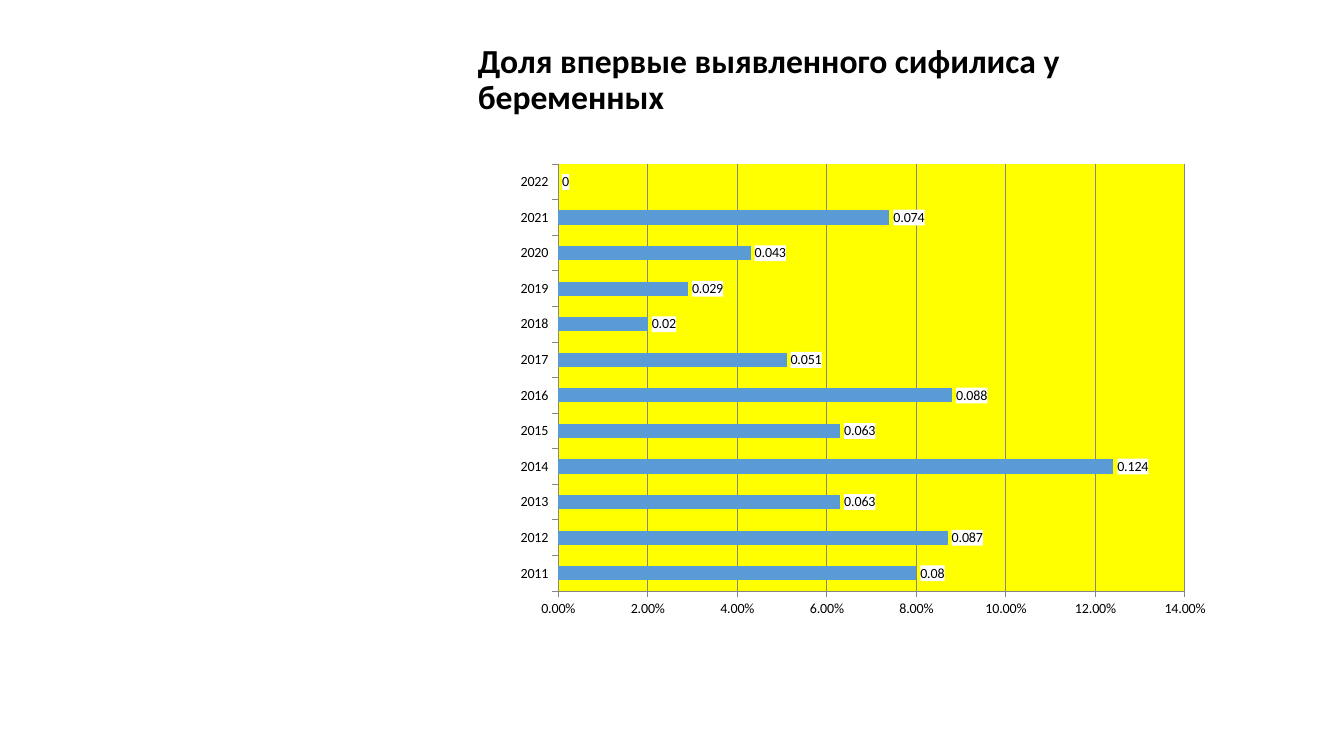
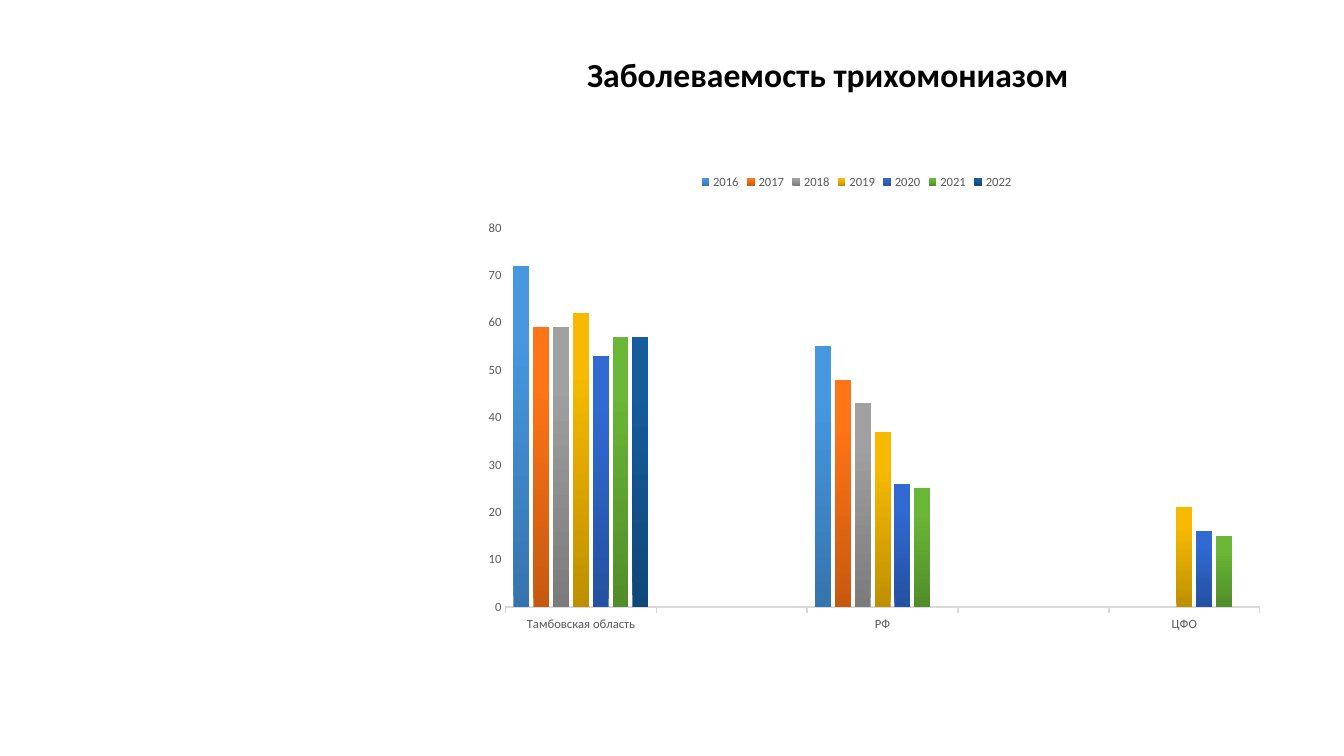
from lxml import etree
from pptx import Presentation
from pptx.chart.data import CategoryChartData
from pptx.dml.color import RGBColor
from pptx.enum.chart import (XL_CHART_TYPE, XL_LABEL_POSITION,
                             XL_LEGEND_POSITION, XL_TICK_MARK)
from pptx.enum.text import MSO_ANCHOR, PP_ALIGN
from pptx.oxml import parse_xml
from pptx.oxml.ns import nsdecls, qn
from pptx.util import Inches, Pt

FONT = "Calibri"
BLACK = RGBColor(0x00, 0x00, 0x00)
WHITE = RGBColor(0xFF, 0xFF, 0xFF)
YELLOW = RGBColor(0xFF, 0xFF, 0x00)
BLUE = RGBColor(0x5B, 0x9B, 0xD5)
GRID_GRAY = RGBColor(0x86, 0x86, 0x86)
TEXT_GRAY = RGBColor(0x59, 0x59, 0x59)
LINE_GRAY = RGBColor(0xD9, 0xD9, 0xD9)

SYPHILIS_SHARE = {
    "2011": 0.08, "2012": 0.087, "2013": 0.063, "2014": 0.124,
    "2015": 0.063, "2016": 0.088, "2017": 0.051, "2018": 0.02,
    "2019": 0.029, "2020": 0.043, "2021": 0.074, "2022": 0,
}

REGIONS = ["Тамбовская область", "", "РФ", "", "ЦФО"]
# year: values by region, then the dark and light ends of the bar gradient
TRICHOMONIASIS = {
    "2016": ((72, None, 55, None, None), "3674AD", "4697E0"),
    "2017": ((59, None, 48, None, None), "C65910", "FF7416"),
    "2018": ((59, None, 43, None, None), "7B7B7B", "A0A0A0"),
    "2019": ((62, None, 37, None, 21), "BE8F00", "F7BA00"),
    "2020": ((53, None, 26, None, 16), "2451A1", "2F69D1"),
    "2021": ((57, None, 25, None, 15), "518D2A", "6AB636"),
    "2022": ((57, None, None, None, None), "104778", "145C9C"),
}


def set_font(font, size, color, bold=False):
    font.name = FONT
    font.size = Pt(size)
    font.bold = bold
    font.color.rgb = color


def add_text(page, text, box, size=24, color=BLACK, bold=True,
             align=PP_ALIGN.LEFT):
    frame = page.shapes.add_textbox(*map(Inches, box)).text_frame
    frame.word_wrap = True
    frame.vertical_anchor = MSO_ANCHOR.MIDDLE
    para = frame.paragraphs[0]
    para.alignment = align
    para.line_spacing = 0.9
    span = para.add_run()
    span.text = text
    set_font(span.font, size, color, bold)


def solid_properties(color):
    return parse_xml(
        f'<c:spPr {nsdecls("c", "a")}><a:solidFill><a:srgbClr val="{color}"/>'
        '</a:solidFill></c:spPr>')


def set_plot_layout(chart, left, top, width, height):
    """Fix the inner plot area, in fractions of the chart."""
    area = chart._chartSpace.chart.plotArea
    for old in area.findall(qn("c:layout")):
        area.remove(old)
    layout = etree.Element(qn("c:layout"))
    manual = etree.SubElement(layout, qn("c:manualLayout"))
    settings = {"layoutTarget": "inner", "xMode": "edge", "yMode": "edge",
                "x": left, "y": top, "w": width, "h": height}
    for name, value in settings.items():
        etree.SubElement(manual, qn(f"c:{name}")).set("val", str(value))
    area.insert(0, layout)
    return area


def add_bar_chart(page, kind, categories, series, box, gap, overlap=0):
    data = CategoryChartData()
    data.categories = categories
    for name, values in series.items():
        data.add_series(name, values)
    chart = page.shapes.add_chart(kind, *map(Inches, box), data).chart
    chart.has_title = False
    chart.has_legend = False
    set_font(chart.font, 10, BLACK)
    plot = chart.plots[0]
    plot.vary_by_categories = False
    plot.gap_width = gap
    plot.overlap = overlap
    return chart


def set_value_scale(axis, maximum, step, number_format):
    axis.minimum_scale = 0
    axis.maximum_scale = maximum
    axis.major_unit = step
    axis.tick_labels.number_format = number_format
    axis.tick_labels.number_format_is_linked = False


def style_axis_line(line, color, width=0.75):
    line.color.rgb = color
    line.width = Pt(width)


def add_value_labels(plot):
    plot.has_data_labels = True
    labels = plot.data_labels
    labels.show_value = True
    labels.position = XL_LABEL_POSITION.OUTSIDE_END
    labels.number_format = "General"
    labels.number_format_is_linked = False
    set_font(labels.font, 10, BLACK)
    text_properties = labels._element.find(qn("c:txPr"))
    text_properties.addprevious(solid_properties(WHITE))


def add_share_chart(page, box):
    """Horizontal bars with labels on a yellow plot area."""
    chart = add_bar_chart(page, XL_CHART_TYPE.BAR_CLUSTERED, SYPHILIS_SHARE,
                          {"Series 1": SYPHILIS_SHARE.values()}, box, gap=150)
    area = set_plot_layout(chart, 0.073, 0.019, 0.878, 0.905)
    area.append(solid_properties(YELLOW))
    set_value_scale(chart.value_axis, 0.14, 0.02, "0.00%")
    chart.value_axis.has_major_gridlines = True
    for line in (chart.value_axis.major_gridlines.format.line,
                 chart.value_axis.format.line,
                 chart.category_axis.format.line):
        style_axis_line(line, GRID_GRAY)
    bars = chart.plots[0].series[0].format.fill
    bars.solid()
    bars.fore_color.rgb = BLUE
    add_value_labels(chart.plots[0])


def add_incidence_chart(page, box):
    """Columns for each year, grouped by region, with a legend on top."""
    columns = {year: row[0] for year, row in TRICHOMONIASIS.items()}
    chart = add_bar_chart(page, XL_CHART_TYPE.COLUMN_CLUSTERED, REGIONS,
                          columns, box, gap=100, overlap=-24)
    set_plot_layout(chart, 0.077, 0.123, 0.909, 0.722)
    chart.has_legend = True
    chart.legend.position = XL_LEGEND_POSITION.TOP
    chart.legend.include_in_layout = False
    value_axis, category_axis = chart.value_axis, chart.category_axis
    set_value_scale(value_axis, 80, 10, "General")
    value_axis.has_major_gridlines = False
    value_axis.major_tick_mark = XL_TICK_MARK.NONE
    value_axis.format.line.fill.background()
    style_axis_line(category_axis.format.line, LINE_GRAY, 1)
    for font in (chart.legend.font, value_axis.tick_labels.font,
                 category_axis.tick_labels.font):
        set_font(font, 9, TEXT_GRAY)
    for series, (_, *shades) in zip(chart.plots[0].series,
                                    TRICHOMONIASIS.values()):
        fill = series.format.fill
        fill.gradient()
        fill.gradient_angle = 90
        for stop, shade, position in zip(fill.gradient_stops, shades, (0, 0.8)):
            stop.color.rgb = RGBColor.from_string(shade)
            stop.position = position


def main():
    deck = Presentation()
    deck.slide_width, deck.slide_height = Inches(13.33), Inches(7.5)
    blank = deck.slide_layouts[6]

    page = deck.slides.add_slide(blank)
    add_share_chart(page, (5.02, 1.54, 7.08, 4.68))
    add_text(page, "Доля впервые выявленного сифилиса у беременных",
             (4.64, 0.4, 7.78, 0.8))

    page = deck.slides.add_slide(blank)
    add_incidence_chart(page, (4.38, 1.62, 8.23, 5.21))
    add_text(page, "Заболеваемость трихомониазом", (4.64, 0.4, 7.14, 0.71),
             align=PP_ALIGN.CENTER)

    deck.save("out.pptx")


if __name__ == "__main__":
    main()
